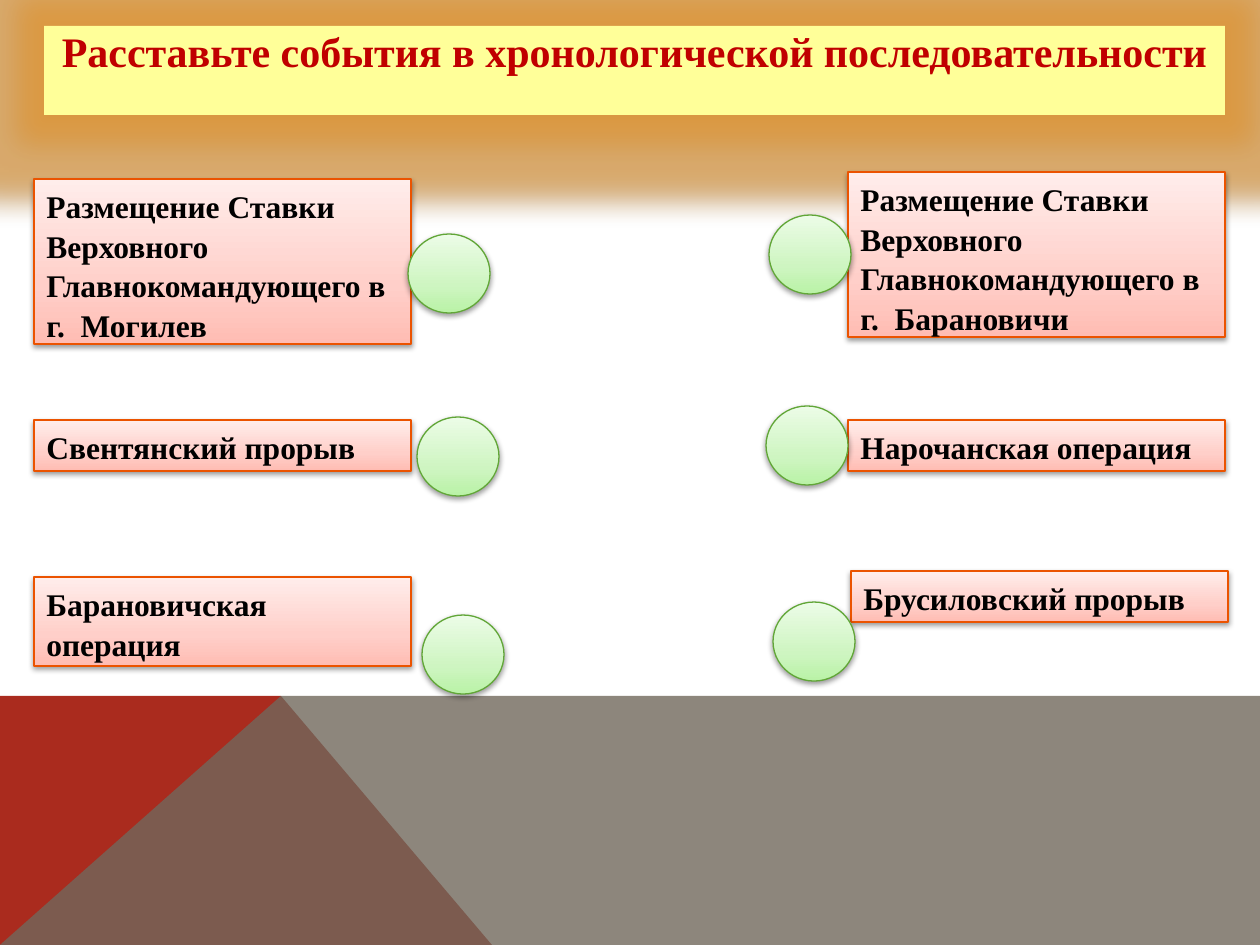
"""Build a quiz slide that asks for events in chronological order."""
from copy import deepcopy

from lxml import etree
from pptx import Presentation
from pptx.dml.color import RGBColor
from pptx.enum.shapes import MSO_SHAPE
from pptx.enum.text import MSO_ANCHOR, MSO_AUTO_SIZE, PP_ALIGN
from pptx.oxml import parse_xml
from pptx.oxml.ns import nsdecls, qn
from pptx.util import Pt

PX = 914400 / 126
FONT = "Times New Roman"
BLACK = RGBColor(0x00, 0x00, 0x00)
TITLE_RED = RGBColor(0xC0, 0x00, 0x00)
TITLE_YELLOW = RGBColor(0xFF, 0xFF, 0x99)
FLOOR_RED = RGBColor(0xAA, 0x2B, 0x1E)
FLOOR_GREY = RGBColor(0x71, 0x68, 0x5C)
EVENT_LINE = RGBColor(0xEB, 0x53, 0x00)
EVENT_STOPS = (RGBColor(0xFF, 0xBC, 0xB3), RGBColor(0xFF, 0xCF, 0xC9), RGBColor(0xFF, 0xED, 0xEB))
CIRCLE_LINE = RGBColor(0x61, 0xA6, 0x37)
CIRCLE_STOPS = (RGBColor(0xB9, 0xF2, 0xA6), RGBColor(0xCE, 0xF5, 0xC1), RGBColor(0xEC, 0xFC, 0xE7))


def place(kind, box, distance, alpha, glow=""):
    shape = slide.shapes.add_shape(kind, *(round(value * PX) for value in box))
    shape._element.spPr.append(parse_xml(
        f'<a:effectLst {nsdecls("a")}>{glow}'
        f'<a:outerShdw blurRad="40000" dist="{distance}" dir="5400000" rotWithShape="0">'
        f'<a:srgbClr val="000000"><a:alpha val="{alpha}000"/></a:srgbClr>'
        '</a:outerShdw></a:effectLst>'))
    return shape


def tint(shape, colors, line_color):
    shape.fill.gradient()
    shape.fill.gradient_angle = 90
    stop_list = shape._element.spPr.find(qn("a:gradFill")).find(qn("a:gsLst"))
    stop_list.insert(1, deepcopy(stop_list[0]))
    for stop, color, position in zip(shape.fill.gradient_stops, colors, (0, 0.35, 1)):
        stop.color.rgb = color
        stop.position = position
    shape.line.color.rgb = line_color
    shape.line.width = Pt(0.75)


deck = Presentation()
deck.slide_width = round(1260 * PX)
deck.slide_height = round(945 * PX)
slide = deck.slides.add_slide(deck.slide_layouts[6])

floor_parts = [
    ([(0, 945), (0, 696), (281, 696), (492, 945)], FLOOR_RED, 100),
    ([(0, 945), (281, 696), (1260, 696), (1260, 945)], FLOOR_GREY, 80),
]
for corners, color, opacity in floor_parts:
    outline = slide.shapes.build_freeform(*corners[0], scale=PX)
    outline.add_line_segments(corners[1:], close=True)
    floor = outline.convert_to_shape()
    floor.shadow.inherit = False
    floor.fill.solid()
    floor.fill.fore_color.rgb = color
    floor.line.fill.background()
    if opacity < 100:
        fill_color = floor._element.spPr.find(qn("a:solidFill"))[0]
        etree.SubElement(fill_color, qn("a:alpha")).set("val", f"{opacity}000")

title = place(
    MSO_SHAPE.RECTANGLE, (44, 26, 1181, 89), 23000, 35,
    '<a:glow rad="400000"><a:srgbClr val="E3952F"><a:alpha val="60000"/></a:srgbClr></a:glow>')
title.fill.solid()
title.fill.fore_color.rgb = TITLE_YELLOW
title.line.fill.background()
title.text_frame.text = "Расставьте события в хронологической последовательности"
title.text_frame.word_wrap = True
title.text_frame.vertical_anchor = MSO_ANCHOR.TOP
title.text_frame.margin_top = 0
heading = title.text_frame.paragraphs[0]
heading.alignment = PP_ALIGN.CENTER
heading.space_before = Pt(8)
heading.font.name = FONT
heading.font.size = Pt(24)
heading.font.bold = True
heading.font.color.rgb = TITLE_RED

events = [
    (848, 172, 165, "Размещение Ставки Верховного Главнокомандующего в г.  Барановичи"),
    (34, 420, 51, "Свентянский прорыв"),
    (34, 577, 89, "Барановичская операция"),
    (34, 179, 165, "Размещение Ставки Верховного Главнокомандующего в г.  Могилев"),
    (848, 420, 51, "Нарочанская операция"),
    (851, 571, 51, "Брусиловский прорыв"),
]
for left, top, height, wording in events:
    event = place(MSO_SHAPE.RECTANGLE, (left, top, 377, height), 20000, 38)
    tint(event, EVENT_STOPS, EVENT_LINE)
    event.text_frame.text = wording
    event.text_frame.word_wrap = True
    event.text_frame.auto_size = MSO_AUTO_SIZE.SHAPE_TO_FIT_TEXT
    event.text_frame.vertical_anchor = MSO_ANCHOR.TOP
    label = event.text_frame.paragraphs[0]
    label.alignment = PP_ALIGN.LEFT
    label.line_spacing = 1.05
    label.font.name = FONT
    label.font.size = Pt(18)
    label.font.bold = True
    label.font.color.rgb = BLACK

for left, top in [(408, 234), (773, 602), (422, 615), (769, 215), (417, 417), (766, 406)]:
    answer_circle = place(MSO_SHAPE.OVAL, (left, top, 82, 79), 20000, 38)
    tint(answer_circle, CIRCLE_STOPS, CIRCLE_LINE)

deck.save("out.pptx")
